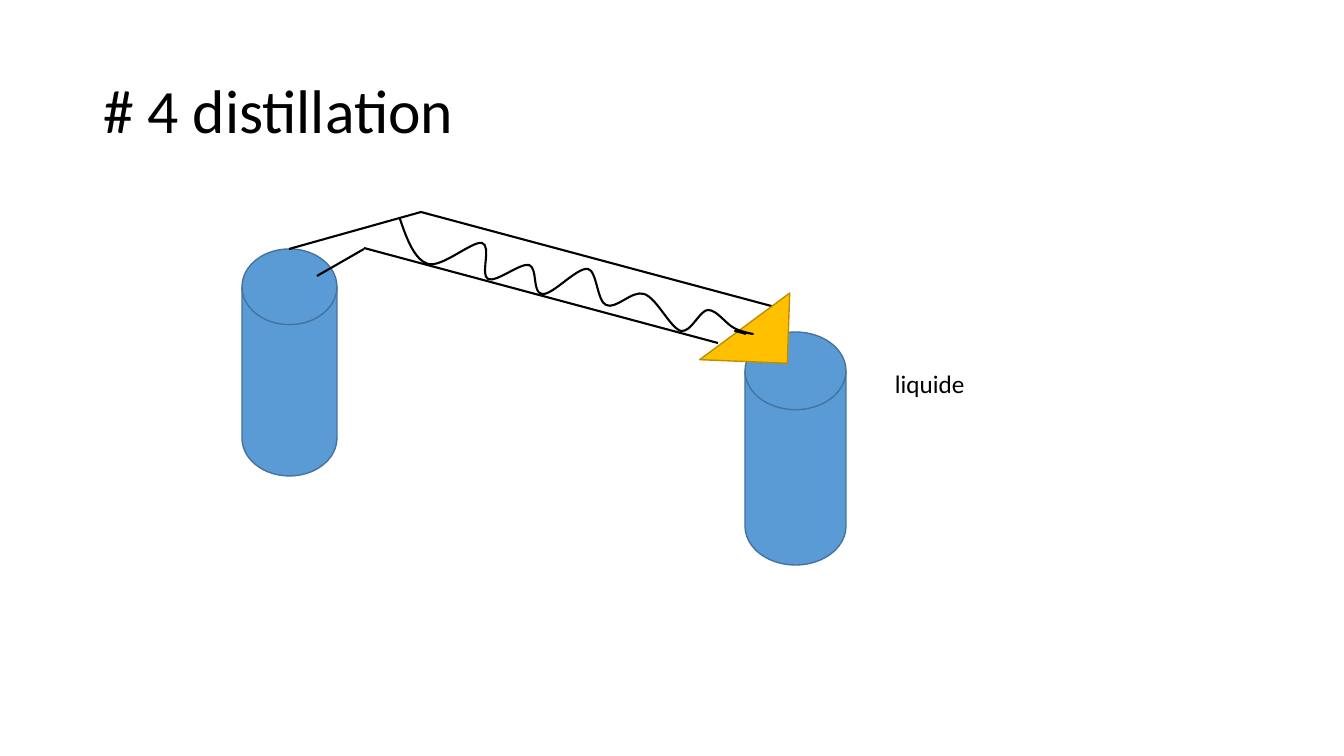
from pptx import Presentation
from pptx import util as u
from pptx.dml.color import RGBColor
from pptx.enum import shapes, text
from pptx.oxml.ns import qn
from lxml import etree

PX = u.Inches(1) / 100.8
BLACK = "000000"
rgb = RGBColor.from_string


def px(*lengths):
    return [u.Emu(round(length * PX)) for length in lengths]


def write(box, words, size, anchor, fit, spacing=None, color=BLACK):
    frame = box.text_frame
    frame.word_wrap = True
    frame.auto_size = fit
    frame.vertical_anchor = anchor
    paragraph = frame.paragraphs[0]
    paragraph.alignment = text.PP_ALIGN.LEFT
    paragraph.line_spacing = spacing
    run = paragraph.add_run()
    run.text = words
    run.font.name = "Calibri"
    run.font.size = u.Pt(size)
    run.font.color.rgb = rgb(color)


deck = Presentation()
deck.slide_width, deck.slide_height = px(1344, 756)
slide = deck.slides.add_slide(deck.slide_layouts[5])

# Title
title = slide.shapes.title
title.left, title.top, title.width, title.height = px(93, 41, 1159, 146)
write(title, "# 4 distillation", 44, text.MSO_ANCHOR.MIDDLE,
      text.MSO_AUTO_SIZE.NONE, spacing=0.9)

# Two vessels
for place in ((242, 249, 95, 227), (745, 332, 101, 233)):
    vessel = slide.shapes.add_shape(
        shapes.MSO_SHAPE.FLOWCHART_MAGNETIC_DISK, *px(*place))
    vessel.shadow.inherit = False
    vessel.fill.solid()
    vessel.fill.fore_color.rgb = rgb("5B9BD5")
    vessel.line.color.rgb = rgb("43739E")
    vessel.line.width = u.Pt(1)

# Condenser walls, then the two sides of the neck
for ends in ((421, 212, 775, 307), (364, 248, 718, 343),
             (421, 212, 289, 249), (364, 249, 317, 276)):
    wall = slide.shapes.add_connector(shapes.MSO_CONNECTOR.STRAIGHT, *px(*ends))
    wall.line.color.rgb = rgb(BLACK)
    wall.line.width = u.Pt(1.5)
    etree.SubElement(wall._element.spPr, qn("a:effectLst"))

# Funnel
funnel = slide.shapes.add_shape(
    shapes.MSO_SHAPE.ISOSCELES_TRIANGLE, *px(705, 321, 112, 55))
funnel.adjustments[0] = 0.39
funnel.rotation = 143.5
funnel.shadow.inherit = False
funnel.fill.solid()
funnel.fill.fore_color.rgb = rgb("FFC000")
funnel.line.color.rgb = rgb("BD8E00")
funnel.line.width = u.Pt(1)

# Cooling coil: each row holds two handles and the end of a cubic curve
coil_start = (400, 219)
coil_curves = [
    ((407, 240), (415, 260), (428, 264)),
    ((442, 268), (472, 241), (482, 243)),
    ((492, 246), (480, 275), (488, 279)),
    ((496, 283), (520, 263), (529, 265)),
    ((538, 268), (532, 293), (542, 294)),
    ((552, 296), (577, 267), (588, 269)),
    ((597, 271), (597, 301), (606, 305)),
    ((616, 310), (632, 290), (644, 294)),
    ((657, 298), (670, 328), (681, 331)),
    ((691, 333), (700, 310), (708, 310)),
    ((717, 310), (726, 324), (734, 328)),
    ((741, 332), (753, 334), (753, 334)),
    ((753, 334), (736, 331), (735, 331)),
    ((734, 331), (740, 332), (746, 334)),
]
builder = slide.shapes.build_freeform(*px(*coil_start))
builder.add_line_segments([px(*curve[-1]) for curve in coil_curves], close=False)
coil = builder.convert_to_shape()
coil.shadow.inherit = False
coil.fill.background()
coil.line.color.rgb = rgb(BLACK)
coil.line.width = u.Pt(1.5)

# Bend the straight segments of the coil into curves
segments = list(coil._element.iter(qn("a:lnTo")))
for segment, curve in zip(segments, coil_curves):
    bend = etree.Element(qn("a:cubicBezTo"))
    for point in curve:
        x, y = px(*point)
        etree.SubElement(bend, qn("a:pt"), x=str(x - coil.left), y=str(y - coil.top))
    segment.getparent().replace(segment, bend)

# Label of the collected product
label = slide.shapes.add_textbox(*px(885, 363, 217, 40))
write(label, "liquide", 18, text.MSO_ANCHOR.TOP,
      text.MSO_AUTO_SIZE.SHAPE_TO_FIT_TEXT)

deck.save("out.pptx")
